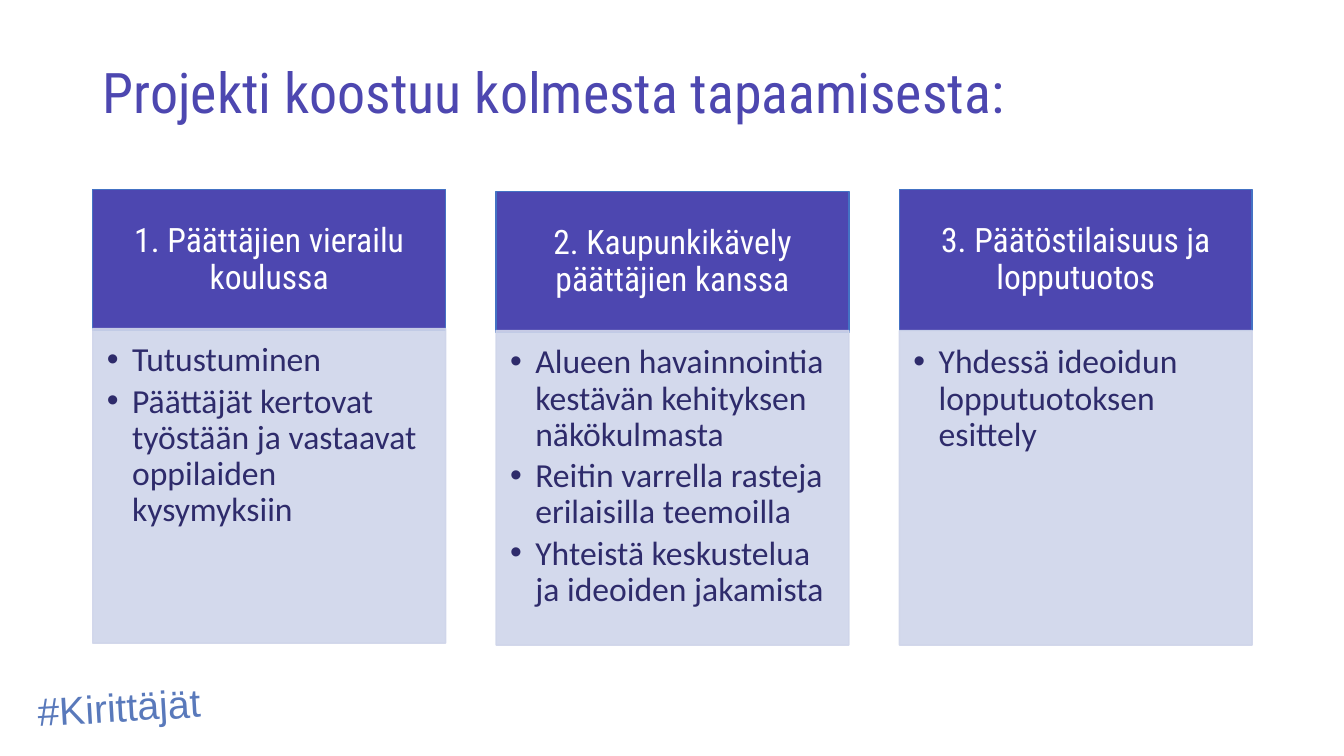
from dataclasses import dataclass

from lxml.etree import SubElement
from pptx import Presentation
from pptx.dml.color import RGBColor
from pptx.enum.shapes import MSO_SHAPE
from pptx.enum.text import MSO_ANCHOR, MSO_AUTO_SIZE, PP_ALIGN
from pptx.oxml.ns import qn
from pptx.util import Inches, Pt


@dataclass(frozen=True)
class Theme:
    violet: str = "4D47B0"
    outline: str = "4472C4"
    panel: str = "CFD5EA"
    ink: str = "2E2B6B"
    white: str = "FFFFFF"
    hashtag: str = "5979BB"
    heading_font: str = "Roboto Condensed"
    body_font: str = "Calibri"
    hashtag_font: str = "Arial"
    title_size: int = 40
    text_size: int = 24
    hashtag_size: int = 28
    panel_opacity: int = 90


@dataclass(frozen=True)
class Box:
    left: float
    top: float
    width: float
    height: float

    def inches(self):
        return [Inches(side) for side in (self.left, self.top, self.width, self.height)]


@dataclass(frozen=True)
class Meeting:
    heading: str
    points: tuple
    heading_top: float
    points_top: float


THEME = Theme()
SLIDE_WIDTH, SLIDE_HEIGHT = 13.33, 7.5
MARGIN = 0.92
CONTENT_WIDTH = 11.5
COLUMN_WIDTH = 3.5
HEADING_HEIGHT = 1.4
POINTS_HEIGHT = 3.12
INDENT = 0.25

TITLE = "Projekti koostuu kolmesta tapaamisesta:"
HASHTAG = "#Kirittäjät"
MEETINGS = (
    Meeting("1. Päättäjien vierailu koulussa", (
        "Tutustuminen",
        "Päättäjät kertovat työstään ja vastaavat oppilaiden kysymyksiin",
    ), 1.88, 3.26),
    Meeting("2. Kaupunkikävely päättäjien kanssa", (
        "Alueen havainnointia kestävän kehityksen näkökulmasta",
        "Reitin varrella rasteja erilaisilla teemoilla",
        "Yhteistä keskustelua ja ideoiden jakamista",
    ), 1.9, 3.28),
    Meeting("3. Päätöstilaisuus ja lopputuotos", (
        "Yhdessä ideoidun lopputuotoksen esittely",
    ), 1.88, 3.28),
)


def add_run(paragraph, text, font_name, size, color):
    run = paragraph.add_run()
    run.text = text
    run.font.name = font_name
    run.font.size = Pt(size)
    run.font.color.rgb = RGBColor.from_string(color)


def set_insets(frame, left, top, right, bottom):
    frame.margin_left, frame.margin_top = Inches(left), Inches(top)
    frame.margin_right, frame.margin_bottom = Inches(right), Inches(bottom)


def set_opacity(color_fill, percent):
    color = color_fill._xPr.find(qn("a:solidFill"))[0]
    SubElement(color, qn("a:alpha")).set("val", str(percent * 1000))


def add_bullet(paragraph):
    properties = paragraph._p.get_or_add_pPr()
    properties.set("marL", str(Inches(INDENT)))
    properties.set("indent", str(-Inches(INDENT)))
    SubElement(properties, qn("a:buFont")).set("typeface", "Arial")
    SubElement(properties, qn("a:buChar")).set("char", "•")


def add_panel(slide, box, fill, outline):
    panel = slide.shapes.add_shape(MSO_SHAPE.RECTANGLE, *box.inches())
    panel.shadow.inherit = False
    panel.fill.solid()
    panel.fill.fore_color.rgb = RGBColor.from_string(fill)
    panel.line.color.rgb = RGBColor.from_string(outline)
    panel.line.width = Pt(1)
    panel.text_frame.word_wrap = True
    return panel


def place_title(slide, box):
    title = slide.shapes.title
    title.left, title.top, title.width, title.height = box.inches()
    frame = title.text_frame
    frame.auto_size = MSO_AUTO_SIZE.NONE
    frame.vertical_anchor = MSO_ANCHOR.MIDDLE
    paragraph = frame.paragraphs[0]
    paragraph.alignment = PP_ALIGN.LEFT
    paragraph.line_spacing = 0.9
    add_run(paragraph, TITLE, THEME.heading_font, THEME.title_size, THEME.violet)


def place_heading(slide, box, heading):
    frame = add_panel(slide, box, THEME.violet, THEME.outline).text_frame
    set_insets(frame, 0.19, 0.11, 0.19, 0.11)
    frame.vertical_anchor = MSO_ANCHOR.MIDDLE
    paragraph = frame.paragraphs[0]
    paragraph.alignment = PP_ALIGN.CENTER
    paragraph.line_spacing = 0.9
    add_run(paragraph, heading, THEME.heading_font, THEME.text_size, THEME.white)


def place_points(slide, box, points):
    panel = add_panel(slide, box, THEME.panel, THEME.panel)
    set_opacity(panel.fill, THEME.panel_opacity)
    set_opacity(panel.line.fill, THEME.panel_opacity)
    frame = panel.text_frame
    set_insets(frame, 0.14, 0.14, 0.19, 0.21)
    frame.vertical_anchor = MSO_ANCHOR.TOP
    for index, point in enumerate(points):
        paragraph = frame.add_paragraph() if index else frame.paragraphs[0]
        add_bullet(paragraph)
        paragraph.alignment = PP_ALIGN.LEFT
        paragraph.line_spacing = 0.9
        paragraph.space_after = Pt(0.15 * THEME.text_size)
        add_run(paragraph, point, THEME.body_font, THEME.text_size, THEME.ink)


def place_meetings(slide, left, width):
    pitch = (width - COLUMN_WIDTH) / (len(MEETINGS) - 1)
    for column, meeting in enumerate(MEETINGS):
        column_left = left + column * pitch
        heading_box = Box(column_left, meeting.heading_top, COLUMN_WIDTH, HEADING_HEIGHT)
        points_box = Box(column_left, meeting.points_top, COLUMN_WIDTH, POINTS_HEIGHT)
        place_heading(slide, heading_box, meeting.heading)
        place_points(slide, points_box, meeting.points)


def place_hashtag(slide, box):
    hashtag = slide.shapes.add_textbox(*box.inches())
    hashtag.rotation = 356.7
    frame = hashtag.text_frame
    frame.word_wrap = True
    frame.auto_size = MSO_AUTO_SIZE.SHAPE_TO_FIT_TEXT
    add_run(frame.paragraphs[0], HASHTAG, THEME.hashtag_font, THEME.hashtag_size, THEME.hashtag)


def main():
    presentation = Presentation()
    presentation.slide_width = Inches(SLIDE_WIDTH)
    presentation.slide_height = Inches(SLIDE_HEIGHT)
    slide = presentation.slides.add_slide(presentation.slide_layouts[5])
    place_hashtag(slide, Box(0.27, 6.7, 2.69, 0.57))
    place_title(slide, Box(MARGIN, 0.4, CONTENT_WIDTH, 1.09))
    place_meetings(slide, MARGIN, CONTENT_WIDTH)
    presentation.save("out.pptx")


if __name__ == "__main__":
    main()
